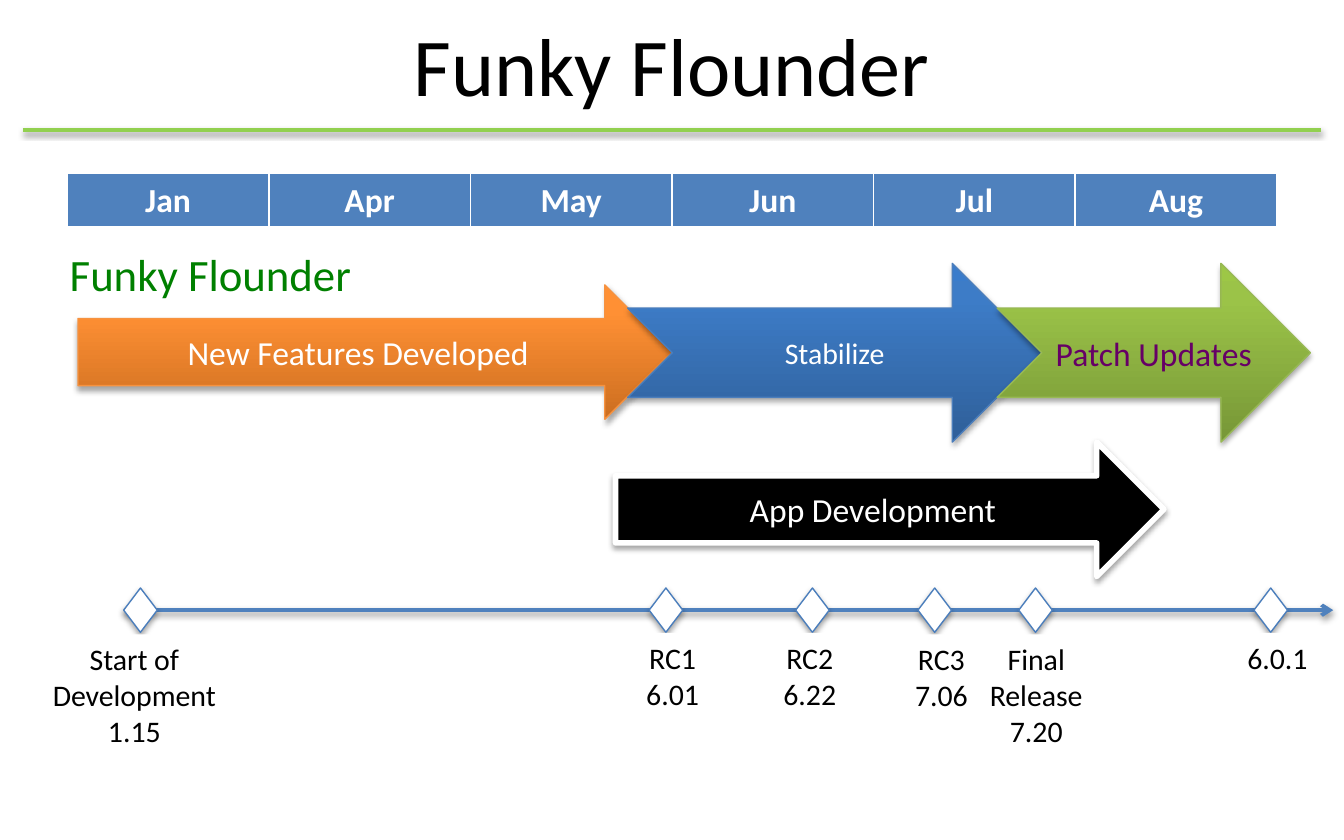
from typing import NamedTuple

from lxml import etree
from pptx import Presentation
from pptx.dml.color import RGBColor
from pptx.enum.shapes import MSO_CONNECTOR, MSO_SHAPE as Shape
from pptx.enum.text import MSO_ANCHOR as Anchor, MSO_AUTO_SIZE as AutoSize, PP_ALIGN as Align
from pptx.oxml import parse_xml
from pptx.oxml.ns import qn
from pptx.util import Inches, Pt

FONT = "Calibri"
BLACK = RGBColor(0x00, 0x00, 0x00)
WHITE = RGBColor(0xFF, 0xFF, 0xFF)
BLUE = RGBColor(0x4F, 0x81, 0xBD)
DIAMOND_EDGE = RGBColor(0x4B, 0x7E, 0xBC)
LIME = RGBColor(0x92, 0xD0, 0x50)
GREEN = RGBColor(0x00, 0x80, 0x00)
PURPLE = RGBColor(0x66, 0x00, 0x66)
ORANGE_EDGE = RGBColor(0xF6, 0x92, 0x40)
OLIVE_EDGE = RGBColor(0x98, 0xB9, 0x55)
ORANGE_STOPS = RGBColor(0xCC, 0x6E, 0x20), RGBColor(0xFF, 0x90, 0x34), RGBColor(0xFF, 0x91, 0x36)
BLUE_STOPS = RGBColor(0x2F, 0x5F, 0x99), RGBColor(0x3D, 0x7C, 0xC7), RGBColor(0x3A, 0x7C, 0xCB)
OLIVE_STOPS = RGBColor(0x77, 0x97, 0x37), RGBColor(0x9B, 0xC3, 0x48), RGBColor(0x9D, 0xC7, 0x46)

NS = 'xmlns:a="http://schemas.openxmlformats.org/drawingml/2006/main"'
MONTHS = ["Jan", "Apr", "May", "Jun", "Jul", "Aug"]
AXIS_Y = 4.54
DIAMOND_W, DIAMOND_H = 0.25, 0.33


class Phase(NamedTuple):
    text: str
    kind: Shape
    box: tuple[float, float, float, float]
    stops: tuple[RGBColor, ...]
    edge: RGBColor
    edge_pt: float = 0.75
    size: int = 18
    color: RGBColor = WHITE


class Milestone(NamedTuple):
    text: str
    diamond_x: float
    box: tuple[float, float, float, float]


PHASES = [
    Phase("New Features Developed", Shape.RIGHT_ARROW, (0.58, 2.12, 4.42, 1),
          ORANGE_STOPS, ORANGE_EDGE),
    Phase("Stabilize", Shape.NOTCHED_RIGHT_ARROW, (4.67, 1.96, 3.08, 1.33),
          BLUE_STOPS, DIAMOND_EDGE, size=16),
    Phase("Patch Updates", Shape.NOTCHED_RIGHT_ARROW, (7.42, 1.96, 2.33, 1.33),
          OLIVE_STOPS, OLIVE_EDGE, color=PURPLE),
    Phase("App Development", Shape.RIGHT_ARROW, (4.58, 3.29, 4.08, 1),
          (BLACK,), WHITE, edge_pt=3),
]

MILESTONES = [
    Milestone("RC1\n6.01", 4.83, (4.67, 4.71, 0.67, 0.64)),
    Milestone("RC2\n6.22", 5.92, (5.67, 4.71, 0.71, 0.64)),
    Milestone("Final Release 7.20", 7.58, (7.25, 4.72, 0.92, 0.91)),
    Milestone("RC3\n7.06", 6.83, (6.67, 4.72, 0.67, 0.64)),
    Milestone("6.0.1", 9.33, (9.17, 4.71, 0.67, 0.37)),
    Milestone("Start of Development\n1.15", 0.92, (0.25, 4.72, 1.5, 0.91)),
]


def add_shadow(shape, alpha: int = 35, dist: float = 1.8) -> None:
    """Drop a soft black shadow straight down; call after the line is set."""
    shape._element.spPr.append(parse_xml(
        f'<a:effectLst {NS}><a:outerShdw blurRad="{Pt(3.1)}" dist="{Pt(dist)}" '
        f'dir="5400000" rotWithShape="0"><a:srgbClr val="000000">'
        f'<a:alpha val="{alpha * 1000}"/></a:srgbClr></a:outerShdw></a:effectLst>'))


def set_gradient(shape, stops: tuple[RGBColor, ...]) -> None:
    """Fill from bottom to top with stops at 0, 80 and 100 percent."""
    shape.fill.gradient()
    shape.fill.gradient_angle = 90
    gs_list = shape._element.spPr.find(qn("a:gradFill")).find(qn("a:gsLst"))
    for old in list(gs_list):
        gs_list.remove(old)
    for percent, color in zip((0, 80, 100), stops):
        gs = etree.SubElement(gs_list, qn("a:gs"), pos=str(percent * 1000))
        etree.SubElement(gs, qn("a:srgbClr"), val=str(color))


def write(tf, text: str, size: int, color: RGBColor, align=Align.CENTER,
          anchor=Anchor.TOP, bold: bool = False) -> None:
    tf.text = text
    tf.word_wrap = True
    tf.vertical_anchor = anchor
    for p in tf.paragraphs:
        p.alignment = align
        for r in p.runs:
            r.font.name, r.font.size, r.font.bold = FONT, Pt(size), bold
            r.font.color.rgb = color


def add_text(s, box: tuple[float, float, float, float], *args, **kwargs):
    tb = s.shapes.add_textbox(*map(Inches, box))
    write(tb.text_frame, *args, **kwargs)
    return tb


def add_line(s, x1: float, x2: float, y: float, color: RGBColor, arrow: bool = False) -> None:
    line = s.shapes.add_connector(MSO_CONNECTOR.STRAIGHT,
                                  Inches(x1), Inches(y), Inches(x2), Inches(y))
    line.line.color.rgb = color
    line.line.width = Pt(2)
    if arrow:
        etree.SubElement(line.line._get_or_add_ln(), qn("a:tailEnd"), type="arrow")
    add_shadow(line, 38, 1.6)


def add_months(s) -> None:
    table = s.shapes.add_table(1, len(MONTHS), Inches(0.5), Inches(1.29),
                               Inches(9), Inches(0.41)).table
    for cell, month in zip(table.rows[0].cells, MONTHS):
        tc_pr = cell._tc.get_or_add_tcPr()
        for side, width in zip("LRTB", (1, 1, 1, 3)):
            tc_pr.append(parse_xml(
                f'<a:ln{side} {NS} w="{Pt(width)}"><a:solidFill>'
                f'<a:srgbClr val="{WHITE}"/></a:solidFill></a:ln{side}>'))
        cell.fill.solid()
        cell.fill.fore_color.rgb = BLUE
        write(cell.text_frame, month, 18, WHITE, bold=True)


def add_phase(s, phase: Phase) -> None:
    sp = s.shapes.add_shape(phase.kind, *map(Inches, phase.box))
    if len(phase.stops) > 1:
        set_gradient(sp, phase.stops)
    else:
        sp.fill.solid()
        sp.fill.fore_color.rgb = phase.stops[0]
    sp.line.color.rgb = phase.edge
    sp.line.width = Pt(phase.edge_pt)
    add_shadow(sp)
    write(sp.text_frame, phase.text, phase.size, phase.color, anchor=Anchor.MIDDLE)


def add_milestone(s, milestone: Milestone) -> None:
    sp = s.shapes.add_shape(Shape.DIAMOND, Inches(milestone.diamond_x),
                            Inches(AXIS_Y - DIAMOND_H / 2), Inches(DIAMOND_W), Inches(DIAMOND_H))
    sp.fill.solid()
    sp.fill.fore_color.rgb = WHITE
    sp.line.color.rgb = DIAMOND_EDGE
    sp.line.width = Pt(0.75)
    add_shadow(sp)
    label = add_text(s, milestone.box, milestone.text, 16, BLACK)
    label.text_frame.auto_size = AutoSize.SHAPE_TO_FIT_TEXT
    label.fill.solid()
    label.fill.fore_color.rgb = WHITE


def main() -> None:
    prs = Presentation()
    prs.slide_width, prs.slide_height = Inches(10), Inches(6.25)
    s = prs.slides.add_slide(prs.slide_layouts[6])

    add_line(s, 0.17, 9.83, 0.97, LIME)
    add_text(s, (0.5, 0.12, 9, 0.71), "Funky Flounder", 44, BLACK, anchor=Anchor.MIDDLE)
    add_months(s)
    add_line(s, 0.92, 9.92, AXIS_Y, BLUE, arrow=True)
    add_text(s, (0.42, 1.79, 3.75, 0.5), "Funky Flounder", 24, GREEN, align=Align.LEFT)
    for phase in PHASES:
        add_phase(s, phase)
    for milestone in MILESTONES:
        add_milestone(s, milestone)

    prs.save("out.pptx")


if __name__ == "__main__":
    main()
